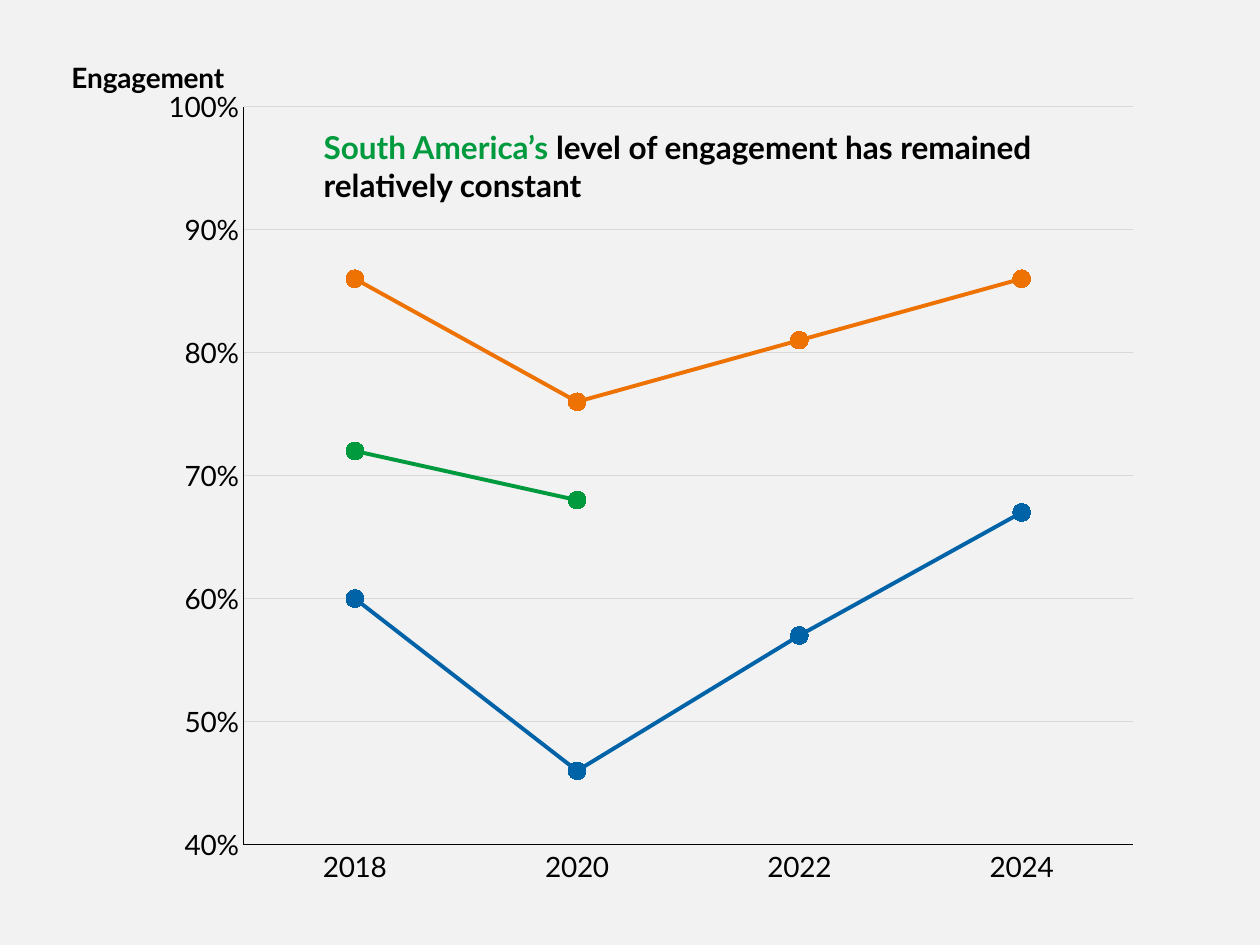
from dataclasses import dataclass

from lxml.etree import SubElement
from pptx import Presentation
from pptx.chart.data import CategoryChartData
from pptx.dml.color import RGBColor as RGB
from pptx.enum.chart import XL_CHART_TYPE as ChartType
from pptx.enum.chart import XL_MARKER_STYLE as Marker
from pptx.enum.chart import XL_TICK_MARK as Tick
from pptx.enum.text import MSO_ANCHOR as Anchor
from pptx.enum.text import MSO_AUTO_SIZE as AutoSize
from pptx.enum.text import PP_ALIGN as Align
from pptx.oxml import parse_xml
from pptx.oxml.ns import nsdecls, qn
from pptx.util import Cm, Pt


@dataclass(frozen=True)
class Theme:
    font: str = "Lato"
    title_size: Pt = Pt(18)
    label_size: Pt = Pt(16)
    background: RGB = RGB(0xF2, 0xF2, 0xF2)
    text: RGB = RGB(0, 0, 0)
    grid: RGB = RGB(0xD9, 0xD9, 0xD9)
    orange: RGB = RGB(0xEE, 0x72, 0x02)
    green: RGB = RGB(0x00, 0x9A, 0x3E)
    blue: RGB = RGB(0x00, 0x62, 0xA7)
    axis_width: Pt = Pt(0.75)
    series_width: Pt = Pt(2.25)
    marker_size: int = 10


def set_layout(parent, index, **values):
    """Give a chart part a manual layout, in fractions of the chart."""
    for old in parent.findall(qn("c:layout")):
        parent.remove(old)
    layout = parse_xml(f"<c:layout {nsdecls('c')}/>")
    manual = SubElement(layout, qn("c:manualLayout"))
    for name, value in values.items():
        SubElement(manual, qn(f"c:{name}")).set("val", str(value))
    parent.insert(index, layout)


class SlideBuilder:
    def __init__(self, prs, theme):
        self.theme = theme
        self.slide = prs.slides.add_slide(prs.slide_layouts[5])
        fill = self.slide.background.fill
        fill.solid()
        fill.fore_color.rgb = theme.background

    def style_font(self, font, size, bold=False):
        font.name, font.size, font.bold = self.theme.font, size, bold
        font.color.rgb = self.theme.text

    def style_line(self, line, color, width):
        line.color.rgb = color
        line.width = width

    def title(self, runs, left, top, width, height):
        """Fill the title from (text, colour) runs and bring it to the front."""
        sp = self.slide.shapes.title
        sp.left, sp.top, sp.width, sp.height = left, top, width, height
        sp.element.getparent().append(sp.element)
        tf = sp.text_frame
        tf.word_wrap = True
        tf.auto_size = AutoSize.SHAPE_TO_FIT_TEXT
        tf.vertical_anchor = Anchor.TOP
        p = tf.paragraphs[0]
        p.alignment = Align.LEFT
        self.style_font(p.font, self.theme.title_size, bold=True)
        for text, color in runs:
            r = p.add_run()
            r.text = text
            r.font.color.rgb = color

    def line_chart(self, categories, series, left, top, width, height):
        """Add a line chart from (name, values, colour) series."""
        data = CategoryChartData(number_format="0%")
        data.categories = categories
        for name, values, _ in series:
            data.add_series(name, values)
        chart = self.slide.shapes.add_chart(
            ChartType.LINE_MARKERS, left, top, width, height, data).chart
        chart.has_legend = chart.has_title = False
        self.style_font(chart.font, self.theme.label_size)
        text_style = chart.element.find(qn("c:txPr"))
        text_style.addprevious(parse_xml(
            f"<c:spPr {nsdecls('c', 'a')}><a:noFill/><a:ln><a:noFill/></a:ln></c:spPr>"))
        plot_area = chart.element.find(f".//{qn('c:plotArea')}")
        set_layout(plot_area, 0, layoutTarget="inner", xMode="edge", yMode="edge",
                   x=0.18, y=0.091, w=0.802, h=0.837)
        chart.plots[0].vary_by_categories = False
        for line, (_, _, color) in zip(chart.plots[0].series, series):
            self.style_series(line, color)
        for axis in (chart.category_axis, chart.value_axis):
            self.style_axis(axis)
        return chart

    def style_series(self, series, color):
        series.smooth = False
        self.style_line(series.format.line, color, self.theme.series_width)
        marker = series.marker
        marker.style, marker.size = Marker.CIRCLE, self.theme.marker_size
        marker.format.fill.solid()
        marker.format.fill.fore_color.rgb = color
        marker.format.line.color.rgb = color

    def style_axis(self, axis):
        axis.major_tick_mark = axis.minor_tick_mark = Tick.NONE
        self.style_font(axis.tick_labels.font, self.theme.label_size)
        self.style_line(axis.format.line, self.theme.text, self.theme.axis_width)

    def percent_axis(self, axis, title, low, high, step):
        axis.minimum_scale, axis.maximum_scale, axis.major_unit = low, high, step
        axis.tick_labels.number_format = "0%"
        axis.tick_labels.number_format_is_linked = False
        axis.has_major_gridlines = True
        self.style_line(axis.major_gridlines.format.line,
                        self.theme.grid, self.theme.axis_width)
        tf = axis.axis_title.text_frame
        tf.text = title
        self.style_font(tf.paragraphs[0].font, self.theme.label_size, bold=True)
        element = axis.axis_title.element if hasattr(axis.axis_title, "element") \
            else chart_title_of(tf)
        body = element.find(f".//{qn('a:bodyPr')}")
        body.set("rot", "0")
        body.set("vert", "horz")
        set_layout(element, 1, xMode="edge", yMode="edge", x=0.02, y=0.03)


def chart_title_of(tf):
    return next(tf.paragraphs[0].font._element.iterancestors(qn("c:title")))


def main():
    prs = Presentation()
    prs.slide_width, prs.slide_height = Cm(25.4), Cm(19.05)
    theme = Theme()
    builder = SlideBuilder(prs, theme)
    chart = builder.line_chart(
        ["2018", "2020", "2022", "2024"],
        [("Series 1", (0.86, 0.76, 0.81, 0.86), theme.orange),
         ("Series 2", (0.72, 0.68, None, None), theme.green),
         ("Series 3", (0.60, 0.46, 0.57, 0.67), theme.blue)],
        Cm(0.89), Cm(0.53), Cm(22.35), Cm(17.78))
    builder.percent_axis(chart.value_axis, "Engagement", 0.4, 1, 0.1)
    builder.title(
        [("South America’s", theme.green),
         (" level of engagement has remained relatively constant", theme.text)],
        Cm(6.27), Cm(2.46), Cm(16.97), Cm(1.8))
    prs.save("out.pptx")


if __name__ == "__main__":
    main()
